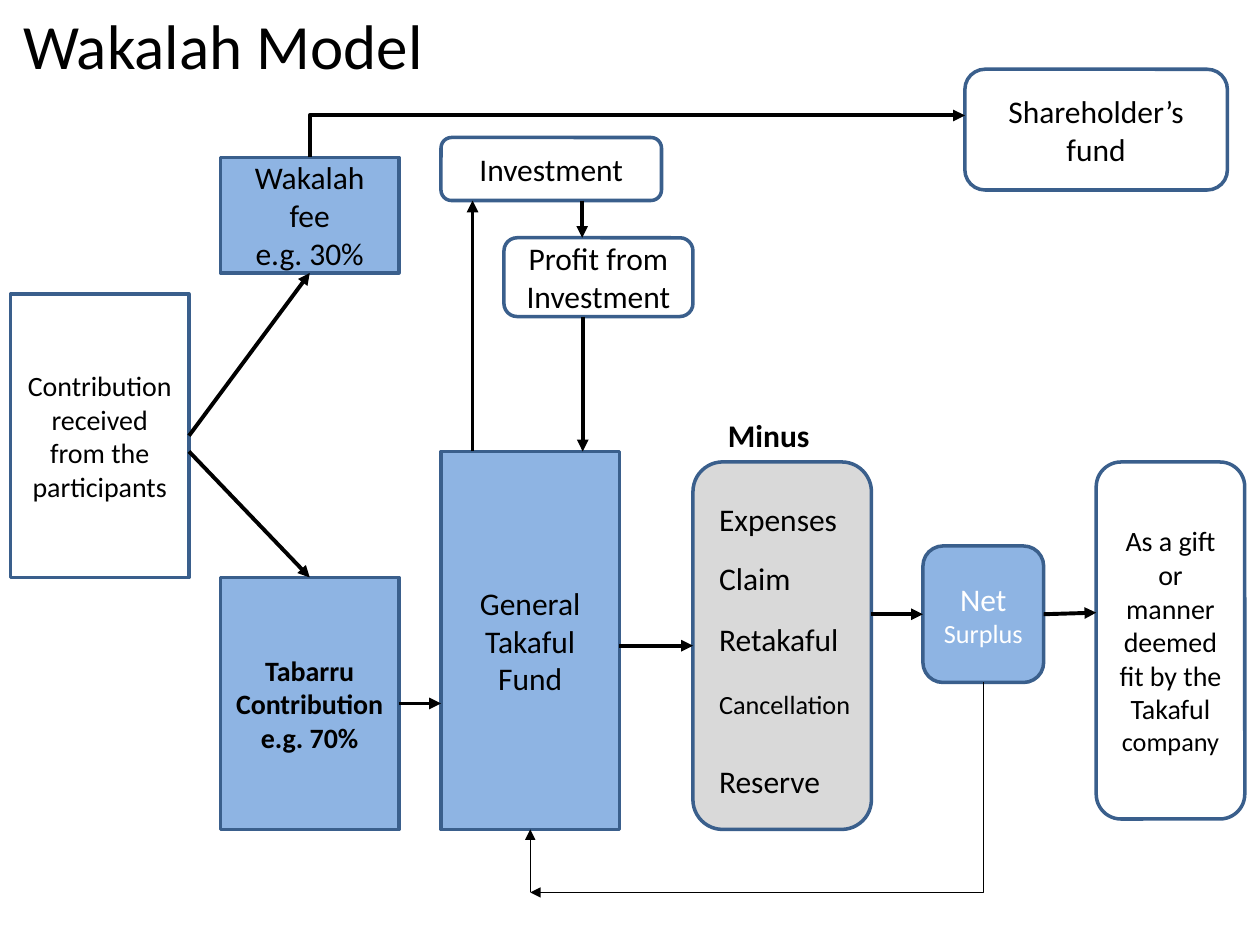
from dataclasses import dataclass
from typing import Union

from lxml.etree import SubElement
from pptx import Presentation
from pptx.dml.color import RGBColor
from pptx.enum.shapes import MSO_CONNECTOR as LINK, MSO_SHAPE as SHAPE
from pptx.enum.text import MSO_ANCHOR as ANCHOR, PP_ALIGN as ALIGN
from pptx.oxml.ns import qn
from pptx.util import Inches, Pt

COLORS = {"white": "FFFFFF", "black": "000000", "blue": "8EB4E3",
          "grey": "D9D9D9", "border": "3A5F8C"}
FONT = "Calibri"
COLS, ROWS = 120, 90  # the slide's grid
TOP, LEFT, BOTTOM, RIGHT = range(4)


@dataclass
class Box:
    """A process step; place is column, row, columns wide, rows high."""
    place: tuple
    text: str = ""
    size: int = 18
    fill: str = "white"
    shape: SHAPE = SHAPE.ROUNDED_RECTANGLE
    color: str = "black"
    bold: bool = False
    ending: str = ""  # last word, set in 15 pt


@dataclass
class Label:
    text: str
    place: tuple
    size: int = 18
    bold: bool = False


@dataclass
class Arrow:
    """Each end is a grid point or a box name with the side it joins."""
    start: tuple[Union[str, float], float]
    end: tuple[Union[str, float], float]
    width: float = 2.25


BOXES = {
    "participants": Box((1, 28, 17, 27), "Contribution received from the participants",
                        16, shape=SHAPE.RECTANGLE),
    "fee": Box((21, 15, 17, 11), "Wakalah fee\ne.g. 30%", fill="blue", shape=SHAPE.RECTANGLE),
    "tabarru": Box((21, 55, 17, 24), "Tabarru Contribution\ne.g. 70%", 16, "blue",
                   SHAPE.RECTANGLE, bold=True),
    "investment": Box((42, 13.1, 21, 6), "Investment"),
    "profit": Box((48, 22.65, 18, 7.5), "Profit from Investment"),
    "general": Box((42, 43, 17, 36), "General Takaful Fund", fill="blue", shape=SHAPE.RECTANGLE),
    "deductions": Box((66, 44, 17, 35), fill="grey"),
    "surplus": Box((87.9, 52, 11.5, 13), "Net ", fill="blue", color="white", ending="Surplus"),
    "gift": Box((104.4, 44, 14.15, 34), "As a gift or manner deemed fit by the Takaful ",
                16, ending="company"),
    "shareholders": Box((91.9, 6.6, 25, 11.5), "Shareholder’s fund"),
}

ARROWS = [
    Arrow(("participants", RIGHT), ("fee", BOTTOM)),
    Arrow((18, 43), ("tabarru", TOP)),
    Arrow((45, 43), (45, 19.1)),
    Arrow((55.45, 19.1), (55.45, 22.65)),
    Arrow((55.5, 30.15), (55.5, 43)),
    Arrow(("tabarru", RIGHT), (42, 67)),
    Arrow((59, 61.5), ("deductions", LEFT)),
    Arrow((83, 58.5), ("surplus", LEFT)),
    Arrow(("surplus", RIGHT), (104.4, 58.35)),
    Arrow((50.5, 85), ("general", BOTTOM), 0.75),
]

# Elbows run vertically first, then horizontally
ELBOWS = [
    Arrow((29.5, 15), (91.9, 11)),
    Arrow((93.65, 65), (50.5, 85), 0.75),
]

LABELS = [Label("Minus", (68.15, 39, 12, 4.85), bold=True)] + [
    Label(text, (67.3, row, 15, 4.85), size) for text, row, size in (
        ("Expenses", 47, 18), ("Claim", 52.6, 18), ("Retakaful", 58.5, 18),
        ("Cancellation", 65, 15), ("Reserve", 72, 18))]

prs = Presentation()
prs.slide_width, prs.slide_height = Inches(10), Inches(7.5)


def x(col: float) -> int:
    return round(prs.slide_width * col / COLS)


def y(row: float) -> int:
    return round(prs.slide_height * row / ROWS)


def area(place: tuple) -> tuple:
    col, row, cols, rows = place
    return x(col), y(row), x(cols), y(rows)


def rgb(name: str) -> RGBColor:
    return RGBColor.from_string(COLORS[name])


def format_run(r, size: float, color: str = "black", bold: bool = False) -> None:
    r.font.name, r.font.size, r.font.bold = FONT, Pt(size), bold
    r.font.color.rgb = rgb(color)


def draw_box(s, box: Box):
    sp = s.shapes.add_shape(box.shape, *area(box.place))
    sp.shadow.inherit = False
    sp.fill.solid()
    sp.fill.fore_color.rgb = rgb(box.fill)
    sp.line.color.rgb = rgb("border")
    sp.line.width = Pt(2)
    tf = sp.text_frame
    tf.text = box.text
    tf.vertical_anchor = ANCHOR.MIDDLE
    for p in tf.paragraphs:
        p.alignment = ALIGN.CENTER
        for r in p.runs:
            format_run(r, box.size, box.color, box.bold)
    if box.ending:
        r = tf.paragraphs[-1].add_run()
        r.text = box.ending
        format_run(r, 15, box.color)
    return sp


def draw_label(s, label: Label) -> None:
    tf = s.shapes.add_textbox(*area(label.place)).text_frame
    tf.word_wrap = True
    tf.text = label.text
    format_run(tf.paragraphs[0].runs[0], label.size, bold=label.bold)


def style_arrow(c, width: float) -> None:
    c.line.color.rgb = rgb("black")
    c.line.width = Pt(width)
    SubElement(c.line._get_or_add_ln(), qn("a:tailEnd"), type="triangle")
    SubElement(c._element.spPr, qn("a:effectLst"))


def draw_arrow(s, arrow: Arrow, shapes: dict) -> None:
    joined = [isinstance(end[0], str) for end in (arrow.start, arrow.end)]
    points = [(0, 0) if fixed else (x(end[0]), y(end[1]))
              for fixed, end in zip(joined, (arrow.start, arrow.end))]
    c = s.shapes.add_connector(LINK.STRAIGHT, *points[0], *points[1])
    for fixed, end, join in zip(joined, (arrow.start, arrow.end),
                                (c.begin_connect, c.end_connect)):
        if fixed:
            join(shapes[end[0]], end[1])
    style_arrow(c, arrow.width)


def draw_elbow(s, arrow: Arrow) -> None:
    (x1, y1), (x2, y2) = [(x(col), y(row)) for col, row in (arrow.start, arrow.end)]
    mid_x, mid_y = (x1 + x2) // 2, (y1 + y2) // 2
    # A quarter turn swaps the frame's width and height
    half_w, half_h = (y2 - y1) // 2, (x1 - x2) // 2
    c = s.shapes.add_connector(LINK.ELBOW, mid_x - half_w, mid_y - half_h,
                               mid_x + half_w, mid_y + half_h)
    c._element.spPr.find(qn("a:xfrm")).set("rot", str(90 * 60000))
    c._element.spPr.find(qn("a:prstGeom")).set("prst", "bentConnector2")
    style_arrow(c, arrow.width)


def main() -> None:
    s = prs.slides.add_slide(prs.slide_layouts[5])

    # Title
    title = s.shapes.title
    title.left, title.top, title.width, title.height = area((1, 0, 44, 8.5))
    tf = title.text_frame
    tf.text = "Wakalah Model"
    tf.vertical_anchor = ANCHOR.TOP
    tf.paragraphs[0].alignment = ALIGN.LEFT
    format_run(tf.paragraphs[0].runs[0], 36)

    # Flow chart
    shapes = {name: draw_box(s, box) for name, box in BOXES.items()}
    for arrow in ARROWS:
        draw_arrow(s, arrow, shapes)
    for elbow in ELBOWS:
        draw_elbow(s, elbow)
    for label in LABELS:
        draw_label(s, label)

    prs.save("out.pptx")


if __name__ == "__main__":
    main()
